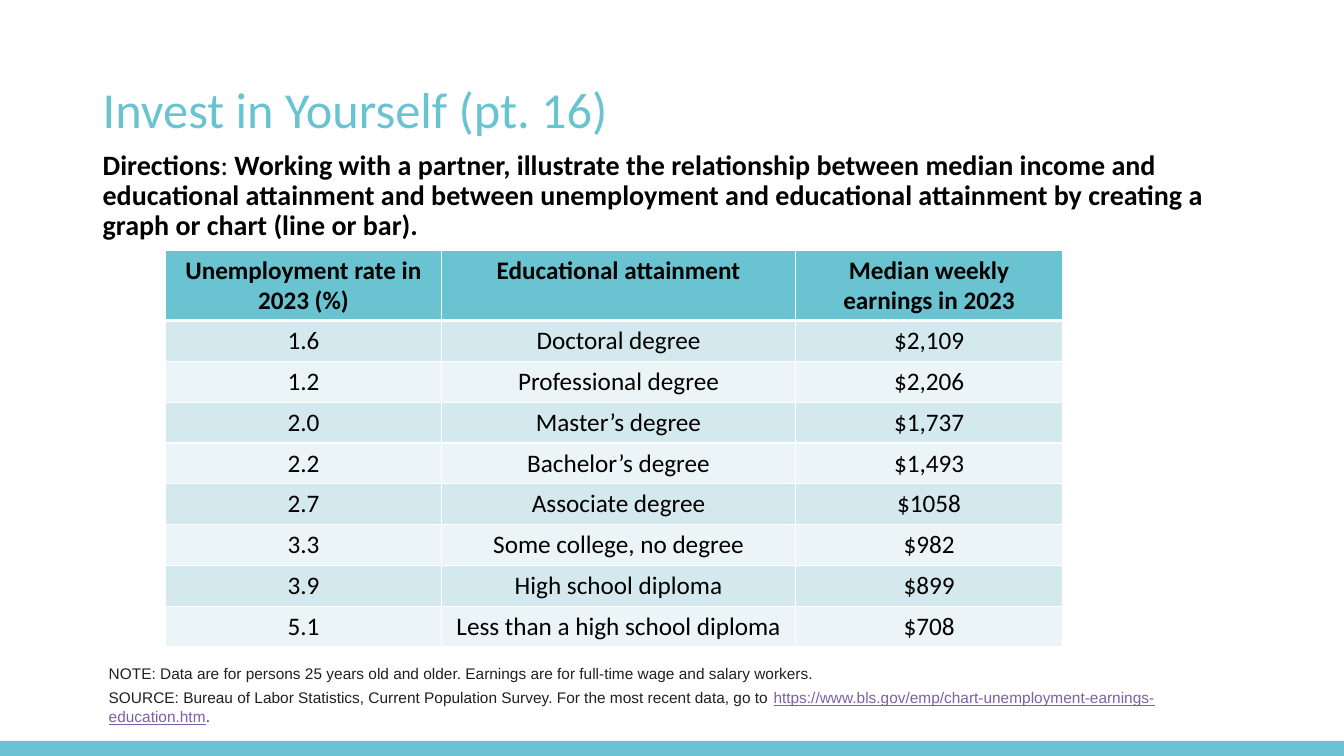
import pptx
import pptx.dml.color
import pptx.enum.shapes
import pptx.enum.text
import pptx.oxml
import pptx.oxml.ns
import pptx.util

Inches = pptx.util.Inches
Pt = pptx.util.Pt
RGBColor = pptx.dml.color.RGBColor

TEAL = RGBColor(0x69, 0xC3, 0xD1)
PALE_TEAL = RGBColor(0xD4, 0xE9, 0xEE)
PALEST_TEAL = RGBColor(0xEB, 0xF5, 0xF7)
BLACK = RGBColor(0, 0, 0)
WHITE = RGBColor(0xFF, 0xFF, 0xFF)
CHARCOAL = RGBColor(0x23, 0x1F, 0x20)
LINK_PURPLE = RGBColor(0x7C, 0x61, 0xA5)

HEADINGS = ("Unemployment rate in 2023 (%)", "Educational attainment",
            "Median weekly earnings in 2023")
ATTAINMENT = (
    ("1.6", "Doctoral degree", "$2,109"),
    ("1.2", "Professional degree", "$2,206"),
    ("2.0", "Master’s degree", "$1,737"),
    ("2.2", "Bachelor’s degree", "$1,493"),
    ("2.7", "Associate degree", "$1058"),
    ("3.3", "Some college, no degree", "$982"),
    ("3.9", "High school diploma", "$899"),
    ("5.1", "Less than a high school diploma", "$708"),
)


def style(paragraph, size, color, face="Calibri", bold=False):
    font = paragraph.font
    font.name, font.size, font.bold = face, Pt(size), bold
    font.color.rgb = color


def add_text_frame(slide, left, top, width, height):
    frame = slide.shapes.add_textbox(
        Inches(left), Inches(top), Inches(width), Inches(height)).text_frame
    frame.word_wrap = True
    return frame


def add_footer_band(slide, left, top, width, height):
    band = slide.shapes.add_shape(
        pptx.enum.shapes.MSO_SHAPE.RECTANGLE,
        Inches(left), Inches(top), Inches(width), Inches(height))
    band.shadow.inherit = False
    band.fill.solid()
    band.fill.fore_color.rgb = TEAL
    band.line.fill.background()


def add_title(slide, left, top, width, height):
    frame = add_text_frame(slide, left, top, width, height)
    frame.vertical_anchor = pptx.enum.text.MSO_ANCHOR.MIDDLE
    title = frame.paragraphs[0]
    title.text = "Invest in Yourself (pt. 16)"
    title.line_spacing = 0.9
    style(title, 36, TEAL)


def add_directions(slide, left, top, width, height):
    directions = add_text_frame(slide, left, top, width, height).paragraphs[0]
    directions.line_spacing = 0.9
    style(directions, 20, BLACK, bold=True)
    directions.add_run().text = "Directions"
    colon = directions.add_run()
    colon.text = ": "
    colon.font.bold = False
    directions.add_run().text = (
        "Working with a partner, illustrate the relationship between median "
        "income and educational attainment and between unemployment and "
        "educational attainment by creating a graph or chart (line or bar).")


def set_borders(cell, bottom_width):
    properties = cell._tc.get_or_add_tcPr()
    widths = {"lnL": 1, "lnR": 1, "lnT": 1, "lnB": bottom_width}
    for position, (side, width) in enumerate(widths.items()):
        properties.insert(position, pptx.oxml.parse_xml(
            f'<a:{side} {pptx.oxml.ns.nsdecls("a")} w="{Pt(width)}">'
            f'<a:solidFill><a:srgbClr val="{WHITE}"/></a:solidFill></a:{side}>'))


def add_attainment_table(slide, left, top, width, height):
    rows = (HEADINGS,) + ATTAINMENT
    table = slide.shapes.add_table(
        len(rows), len(HEADINGS),
        Inches(left), Inches(top), Inches(width), Inches(height)).table
    for column, share in zip(table.columns, (2.74, 3.51, 2.65)):
        column.width = Inches(width * share / 8.9)
    heading_height = 0.7
    degree_height = (height - heading_height) / len(ATTAINMENT)
    for row_number, row in enumerate(rows):
        is_heading = row_number == 0
        band = PALE_TEAL if row_number % 2 else PALEST_TEAL
        table.rows[row_number].height = Inches(
            heading_height if is_heading else degree_height)
        for column_number, entry in enumerate(row):
            cell = table.cell(row_number, column_number)
            cell.text = entry
            cell.fill.solid()
            cell.fill.fore_color.rgb = TEAL if is_heading else band
            set_borders(cell, 3 if is_heading else 1)
            paragraph = cell.text_frame.paragraphs[0]
            paragraph.alignment = pptx.enum.text.PP_ALIGN.CENTER
            style(paragraph, 18, BLACK, bold=is_heading)


def add_source_note(slide, left, top, width, height):
    frame = add_text_frame(slide, left, top, width, height)
    note = frame.paragraphs[0]
    note.text = ("NOTE: Data are for persons 25 years old and older. "
                 "Earnings are for full-time wage and salary workers.")
    source = frame.add_paragraph()
    source.line_spacing = 1.03
    source.space_before = Pt(3.4)
    for paragraph in (note, source):
        paragraph._p.get_or_add_pPr().set("marL", str(Inches(0.46)))
        style(paragraph, 11, CHARCOAL, "Arial")
    source.add_run().text = (
        "SOURCE: Bureau of Labor Statistics, Current Population Survey. "
        "For the most recent data, go to ")
    address = source.add_run()
    address.text = "https://www.bls.gov/emp/chart-unemployment-earnings-education.htm"
    address.font.color.rgb = LINK_PURPLE
    address.font.underline = True
    source.add_run().text = "."


def main():
    deck = pptx.Presentation()
    deck.slide_width, deck.slide_height = Inches(13.33), Inches(7.5)
    slide = deck.slides.add_slide(deck.slide_layouts[6])
    add_footer_band(slide, 0, 7.35, 13.33, 0.15)
    add_title(slide, 0.92, 0.78, 11.5, 0.66)
    add_directions(slide, 0.92, 1.45, 11.5, 1)
    add_attainment_table(slide, 1.64, 2.48, 8.9, 3.94)
    add_source_note(slide, 0.52, 6.54, 11.81, 0.7)
    deck.save("out.pptx")


if __name__ == "__main__":
    main()
